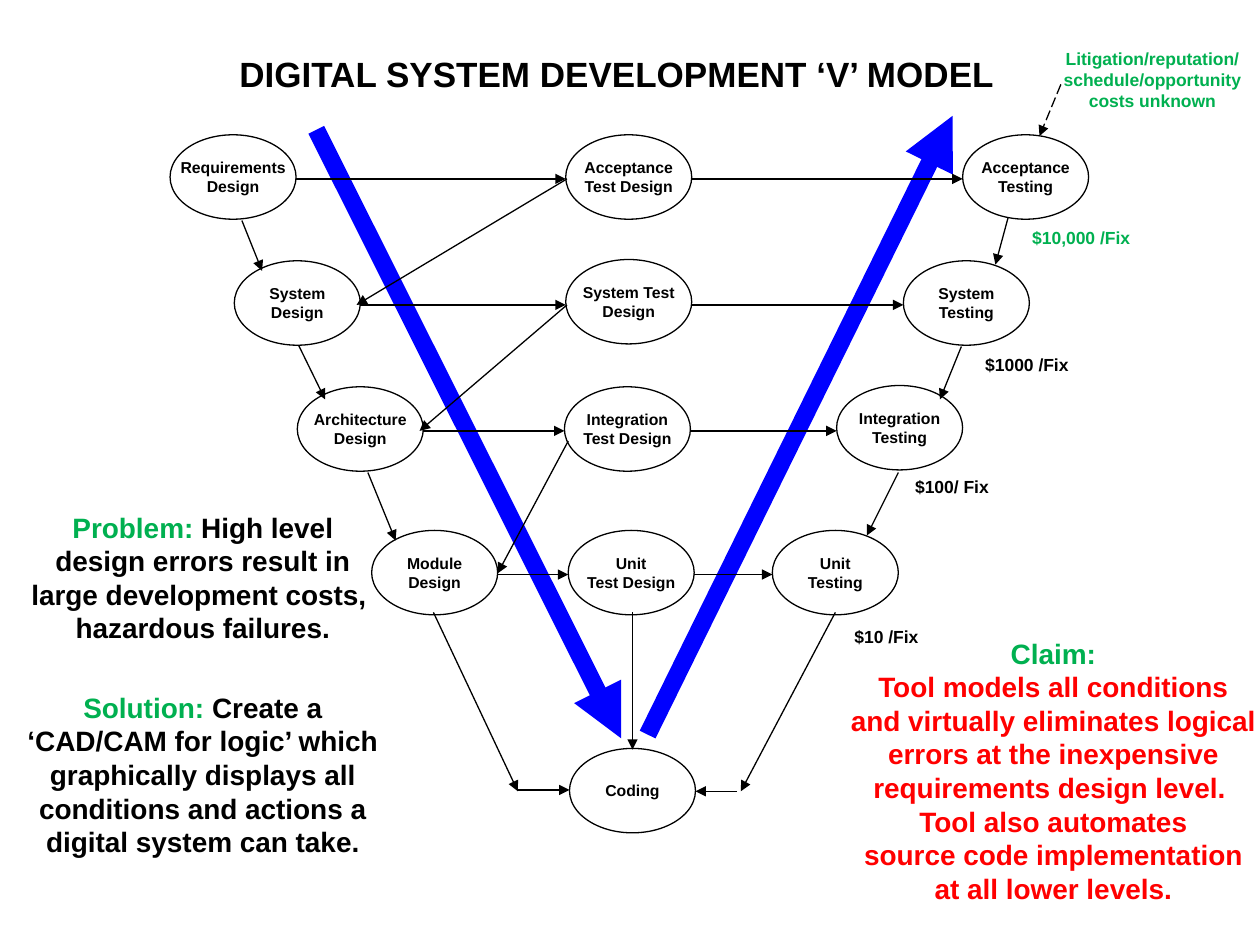
from typing import NamedTuple

from lxml.etree import SubElement
from pptx import Presentation
from pptx.dml.color import RGBColor
from pptx.enum.dml import MSO_LINE
from pptx.enum.shapes import MSO_CONNECTOR, MSO_SHAPE
from pptx.enum.text import MSO_ANCHOR, MSO_AUTO_SIZE, PP_ALIGN
from pptx.oxml.ns import qn
from pptx.util import Inches, Pt

BLACK = RGBColor(0x00, 0x00, 0x00)
BLUE = RGBColor(0x00, 0x00, 0xFF)
GREEN = RGBColor(0x00, 0xB0, 0x50)
RED = RGBColor(0xFF, 0x00, 0x00)
FONT = "Arial"
OVAL_WIDTH, OVAL_HEIGHT = 1, 0.67
AXIS = 0.35  # height of a row's arrows below the top of its ovals


class Stage(NamedTuple):
    left: float
    top: float
    lines: tuple


class Arrow(NamedTuple):
    x1: float
    y1: float
    x2: float
    y2: float
    color: RGBColor = BLACK
    width: float = 0.75
    dash: object = None


class Span(NamedTuple):
    text: str
    color: RGBColor = BLACK


class Note(NamedTuple):
    left: float
    top: float
    width: float
    height: float
    size: int
    paragraphs: tuple  # each paragraph is a tuple of spans
    indent: float = 0


# Each row of the V: design stage, test design stage, testing stage
ROWS = [
    (Stage(1.35, 1.07, ("Requirements", "Design")),
     Stage(4.49, 1.07, ("Acceptance", "Test Design")),
     Stage(7.64, 1.07, ("Acceptance", "Testing"))),
    (Stage(1.86, 2.07, ("System", "Design")),
     Stage(4.49, 2.06, ("System Test", "Design")),
     Stage(7.17, 2.07, ("System", "Testing"))),
    (Stage(2.36, 3.07, ("Architecture", "Design")),
     Stage(4.48, 3.07, ("Integration", "Test Design")),
     Stage(6.64, 3.06, ("Integration", "Testing"))),
    (Stage(2.95, 4.21, ("Module", "Design")),
     Stage(4.51, 4.21, ("Unit", "Test Design")),
     Stage(6.13, 4.21, ("Unit", "Testing"))),
]
CODING = Stage(4.52, 5.94, ("Coding",))

V_ARROWS = [
    Arrow(2.51, 1.03, 4.93, 5.86, BLUE, 10),
    Arrow(5.14, 5.83, 7.56, 0.92, BLUE, 10),
]
STEP_ARROWS = [
    # down the design side
    Arrow(1.92, 1.75, 2.08, 2.15),
    Arrow(2.37, 2.74, 2.58, 3.17),
    Arrow(2.92, 3.75, 3.14, 4.29),
    # down the testing side
    Arrow(8, 1.73, 7.9, 2.1),
    Arrow(7.63, 2.75, 7.46, 3.17),
    Arrow(7.13, 3.75, 6.88, 4.25),
    # into coding
    Arrow(3.44, 4.86, 4.11, 6.28),
    Arrow(4.1, 6.27, 4.52, 6.27),
    Arrow(5.02, 4.86, 5.02, 5.95),
    Arrow(6.63, 4.86, 5.88, 6.28),
    Arrow(5.85, 6.28, 5.52, 6.28),
    # from test design back to the next design stage
    Arrow(4.5, 1.42, 2.83, 2.42),
    Arrow(4.5, 2.42, 3.33, 3.42),
    Arrow(4.51, 3.5, 3.95, 4.55),
    # unknown costs
    Arrow(8.42, 0.67, 8.25, 1.08, dash=MSO_LINE.LONG_DASH),
]

NOTES = [
    Note(6.61, 4.92, 0.85, 0.27, 10, ((Span("$10 /Fix"),),)),
    Note(7.13, 3.73, 0.85, 0.27, 10, ((Span("$100/ Fix"),),)),
    Note(7.63, 2.76, 1.04, 0.27, 10, ((Span("$1000 /Fix"),),)),
    Note(7.99, 1.75, 1.18, 0.27, 10, ((Span("$10,000 /Fix", GREEN),),)),
    Note(8.29, 0.33, 1.71, 0.61, 10, (
        (Span("Litigation/reputation/", GREEN),),
        (Span("schedule/opportunity costs unknown", GREEN),))),
    Note(6.15, 5, 3.92, 1.97, 16, (
        (Span("Claim:", GREEN),),
        (Span("Tool models all conditions and virtually eliminates logical "
              "errors at the inexpensive requirements design level.  "
              "Tool also automates", RED),),
        (Span("source code implementation at all lower levels.", RED),)),
        indent=0.5),
    Note(0.11, 5.43, 3, 1.45, 16, ((
        Span("Solution:", GREEN),
        Span(" Create a ‘CAD/CAM for logic’ which graphically displays all "
             "conditions and actions a digital system can take.")),)),
    Note(0.11, 4, 3, 1.18, 16, ((
        Span("Problem:", GREEN),
        Span(" High level design errors result in large development costs,  "
             "hazardous failures.")),)),
]


def write(text_frame, paragraphs: tuple, size: int, align=PP_ALIGN.CENTER) -> None:
    for index, spans in enumerate(paragraphs):
        paragraph = text_frame.paragraphs[0] if index == 0 else text_frame.add_paragraph()
        paragraph.alignment = align
        for span in spans:
            run = paragraph.add_run()
            run.text = span.text
            run.font.name = FONT
            run.font.size = Pt(size)
            run.font.bold = True
            run.font.color.rgb = span.color


def add_title(slide, text: str) -> None:
    title = slide.shapes.title
    title.left, title.top = Inches(1.9), Inches(0.42)
    title.width, title.height = Inches(6.24), Inches(0.34)
    frame = title.text_frame
    frame.margin_left = frame.margin_right = frame.margin_top = frame.margin_bottom = 0
    frame.word_wrap = False
    frame.auto_size = MSO_AUTO_SIZE.NONE
    frame.vertical_anchor = MSO_ANCHOR.TOP
    write(frame, ((Span(text),),), 20, PP_ALIGN.LEFT)


def add_stage(slide, stage: Stage) -> None:
    oval = slide.shapes.add_shape(MSO_SHAPE.OVAL, Inches(stage.left), Inches(stage.top),
                                  Inches(OVAL_WIDTH), Inches(OVAL_HEIGHT))
    oval.shadow.inherit = False
    oval.fill.background()
    oval.line.color.rgb = BLACK
    oval.line.width = Pt(0.75)
    frame = oval.text_frame
    frame.word_wrap = False
    frame.vertical_anchor = MSO_ANCHOR.MIDDLE
    write(frame, tuple((Span(line),) for line in stage.lines), 9)


def add_arrow(slide, arrow: Arrow) -> None:
    connector = slide.shapes.add_connector(
        MSO_CONNECTOR.STRAIGHT, Inches(arrow.x1), Inches(arrow.y1),
        Inches(arrow.x2), Inches(arrow.y2))
    line = connector.line
    line.color.rgb = arrow.color
    line.width = Pt(arrow.width)
    if arrow.dash is not None:
        line.dash_style = arrow.dash
    properties = connector.element.spPr
    SubElement(properties.find(qn("a:ln")), qn("a:tailEnd"), type="triangle")
    SubElement(properties, qn("a:effectLst"))


def add_note(slide, note: Note) -> None:
    box = slide.shapes.add_textbox(Inches(note.left), Inches(note.top),
                                   Inches(note.width), Inches(note.height))
    frame = box.text_frame
    frame.word_wrap = True
    frame.auto_size = MSO_AUTO_SIZE.SHAPE_TO_FIT_TEXT
    write(frame, note.paragraphs, note.size)
    if note.indent:
        for paragraph in frame.paragraphs:
            paragraph._p.get_or_add_pPr().set("marL", str(Inches(note.indent)))


def main() -> None:
    presentation = Presentation()
    presentation.slide_width, presentation.slide_height = Inches(10), Inches(7.5)
    slide = presentation.slides.add_slide(presentation.slide_layouts[5])
    add_title(slide, "DIGITAL SYSTEM DEVELOPMENT ‘V’ MODEL")
    for arrow in V_ARROWS:
        add_arrow(slide, arrow)
    for row in ROWS:
        for stage in row:
            add_stage(slide, stage)
        axis = row[0].top + AXIS
        for source, target in zip(row, row[1:]):
            add_arrow(slide, Arrow(source.left + OVAL_WIDTH, axis, target.left, axis))
    add_stage(slide, CODING)
    for arrow in STEP_ARROWS:
        add_arrow(slide, arrow)
    for note in NOTES:
        add_note(slide, note)
    presentation.save("out.pptx")


if __name__ == "__main__":
    main()
